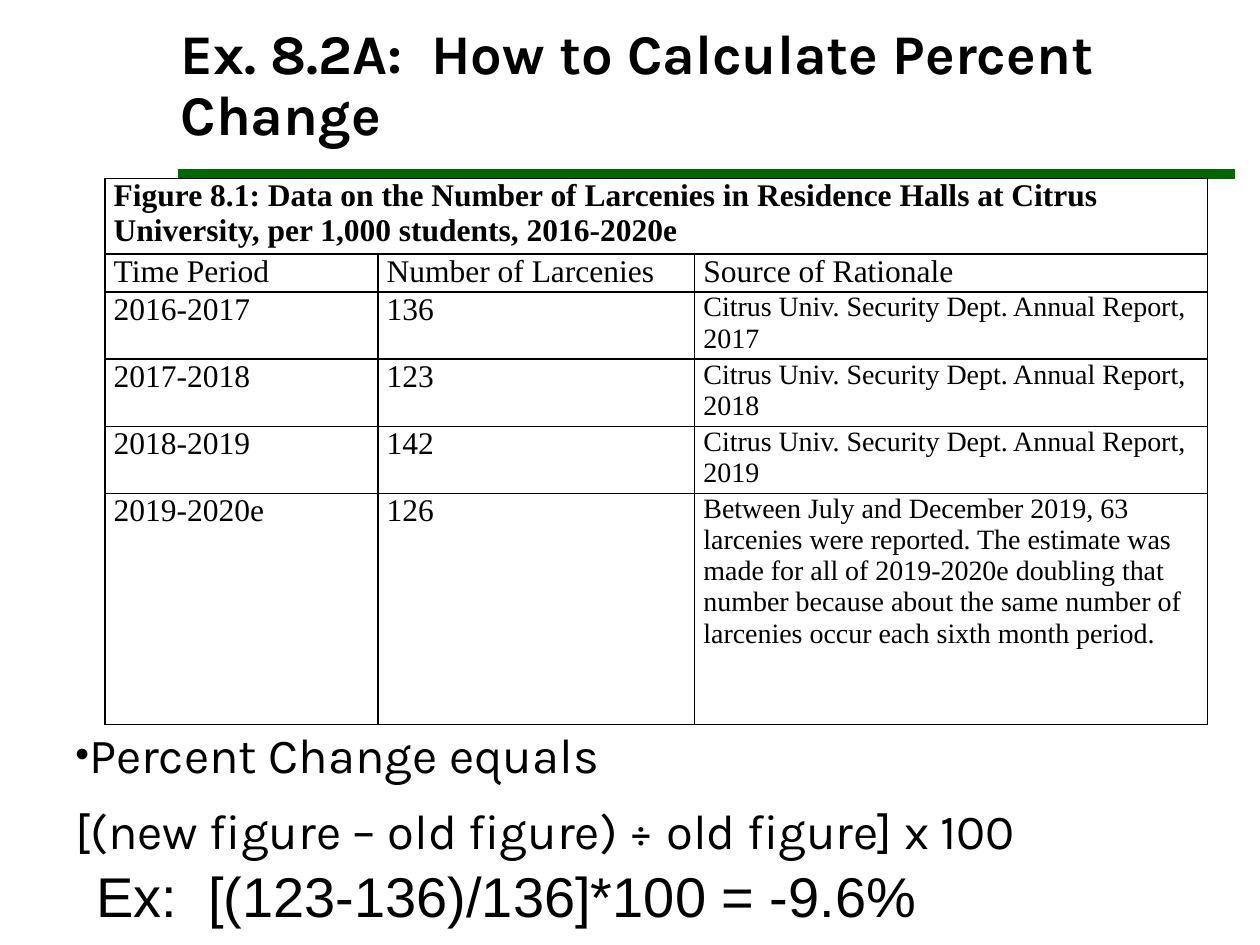
import dataclasses

import pptx
import pptx.dml.color
import pptx.enum.shapes
import pptx.enum.text
import pptx.oxml
import pptx.oxml.ns
import pptx.util

Pt = pptx.util.Pt
BLACK, GREEN = "000000", "006600"


@dataclasses.dataclass(frozen=True)
class Box:
    left: float
    top: float
    width: float
    height: float

    def lengths(self) -> list:
        return [Pt(value) for value in dataclasses.astuple(self)]


@dataclasses.dataclass(frozen=True)
class TextStyle:
    font: str
    size: float
    bold: bool = False


@dataclasses.dataclass(frozen=True)
class LarcenyRow:
    period: str
    count: str
    rationale: str
    height: float


def color(hex_code: str) -> pptx.dml.color.RGBColor:
    return pptx.dml.color.RGBColor.from_string(hex_code)


def xml_element(tag: str, body: str = "", attributes: str = ""):
    return pptx.oxml.parse_xml(
        f"<a:{tag} {pptx.oxml.ns.nsdecls('a')} {attributes}>{body}</a:{tag}>")


def set_values(target, values: dict) -> None:
    for name, value in values.items():
        setattr(target, name, value)


def write(paragraph, text: str, style: TextStyle, **spacing) -> None:
    run = paragraph.add_run()
    run.text = text
    set_values(run.font, {"name": style.font, "size": Pt(style.size), "bold": style.bold})
    run.font.color.rgb = color(BLACK)
    set_values(paragraph, {"alignment": pptx.enum.text.PP_ALIGN.LEFT,
                           "space_before": Pt(0), **spacing})


def add_text_frame(slide, box: Box):
    frame = slide.shapes.add_textbox(*box.lengths()).text_frame
    frame.word_wrap = True
    return frame


def add_rule(slide, left: float, right: float, y: float, width: float) -> None:
    rule = slide.shapes.add_connector(
        pptx.enum.shapes.MSO_CONNECTOR.STRAIGHT, Pt(left), Pt(y), Pt(right), Pt(y))
    rule.line.color.rgb = color(GREEN)
    rule.line.width = Pt(width)
    rule._element.spPr.append(xml_element("effectLst"))


def format_cell(cell) -> None:
    set_values(cell, {"margin_left": Pt(5), "margin_right": Pt(5),
                      "margin_top": Pt(0), "margin_bottom": Pt(0)})
    cell.fill.background()
    stroke = f'<a:solidFill><a:srgbClr val="{BLACK}"/></a:solidFill>'
    for position, side in enumerate(("lnL", "lnR", "lnT", "lnB")):
        border = xml_element(side, stroke, f'w="{Pt(1)}"')
        cell._tc.get_or_add_tcPr().insert(position, border)


def add_larceny_table(slide, box: Box, widths: list[float], caption: str,
                      caption_height: float, rows: list[LarcenyRow]) -> None:
    table = slide.shapes.add_table(len(rows) + 1, len(widths), *box.lengths()).table
    set_values(table, {"first_row": False, "horz_banding": False})
    for column, width in zip(table.columns, widths):
        column.width = Pt(width)
    for row, height in zip(table.rows, [caption_height] + [r.height for r in rows]):
        row.height = Pt(height)
    for cell in table.iter_cells():
        format_cell(cell)

    table.cell(0, 0).merge(table.cell(0, len(widths) - 1))
    write(table.cell(0, 0).text_frame.paragraphs[0], caption,
          TextStyle("Times New Roman", 18, True))
    for index, row in enumerate(rows, start=1):
        for column, text in enumerate((row.period, row.count, row.rationale)):
            size = 16 if index > 1 and column == 2 else 18
            write(table.cell(index, column).text_frame.paragraphs[0], text,
                  TextStyle("Times New Roman", size))


def main() -> None:
    deck = pptx.Presentation()
    set_values(deck, {"slide_width": Pt(720), "slide_height": Pt(540)})
    slide = deck.slides.add_slide(deck.slide_layouts[5])

    # Title and the rule beneath it
    add_rule(slide, left=102, right=706, y=99.4, width=6)
    title = slide.shapes.title
    set_values(title, dict(zip(("left", "top", "width", "height"),
                               Box(96, 14.4, 618, 73.4).lengths())))
    set_values(title.text_frame, {"vertical_anchor": pptx.enum.text.MSO_ANCHOR.BOTTOM,
                                  "auto_size": pptx.enum.text.MSO_AUTO_SIZE.NONE,
                                  "word_wrap": True})
    write(title.text_frame.paragraphs[0], "Ex. 8.2A:  How to Calculate Percent Change",
          TextStyle("Karla", 32, True), line_spacing=0.9)

    # Formula for percent change
    formula = add_text_frame(slide, Box(36, 414, 636, 195))
    formula_style = TextStyle("Karla", 28)
    definition = formula.paragraphs[0]
    expression = formula.add_paragraph()
    for paragraph in (definition, expression):
        set_values(paragraph._p.get_or_add_pPr(),
                   {"marL": Pt(16.5), "indent": Pt(-13.5)})
    bullet = (xml_element("buClr", f'<a:srgbClr val="{BLACK}"/>'),
              xml_element("buSzPct", attributes='val="80000"'),
              xml_element("buFont", attributes='typeface="Arial"'),
              xml_element("buChar", attributes='char="•"'))
    for part in bullet:
        definition._p.get_or_add_pPr().append(part)
    write(definition, "Percent Change equals", formula_style, line_spacing=0.9)
    write(expression, "[(new figure – old figure) ÷ old figure] x 100", formula_style,
          line_spacing=0.9, space_before=Pt(13.5))

    # Worked example
    example = add_text_frame(slide, Box(48, 489, 570, 46))
    example.auto_size = pptx.enum.text.MSO_AUTO_SIZE.SHAPE_TO_FIT_TEXT
    write(example.paragraphs[0], "Ex:  [(123-136)/136]*100 = -9.6%",
          TextStyle("Arial", 32))

    # Larceny data
    report = "Citrus Univ. Security Dept. Annual Report, "
    estimate = ("Between July and December 2019, 63 larcenies were reported. "
                "The estimate was made for all of 2019-2020e doubling that number "
                "because about the same number of larcenies occur each sixth month period.")
    rows = [
        LarcenyRow("Time Period", "Number of Larcenies", "Source of Rationale", 20.2),
        LarcenyRow("2016-2017", "136", report + "2017", 36.7),
        LarcenyRow("2017-2018", "123", report + "2018", 36.7),
        LarcenyRow("2018-2019", "142", report + "2019", 36.7),
        LarcenyRow("2019-2020e", "126", estimate, 131.8),
    ]
    add_larceny_table(
        slide, Box(60, 102, 630, 312), [156, 181, 293],
        "Figure 8.1: Data on the Number of Larcenies in Residence Halls at Citrus "
        "University, per 1,000 students, 2016-2020e", 41, rows)

    deck.save("out.pptx")


if __name__ == "__main__":
    main()
